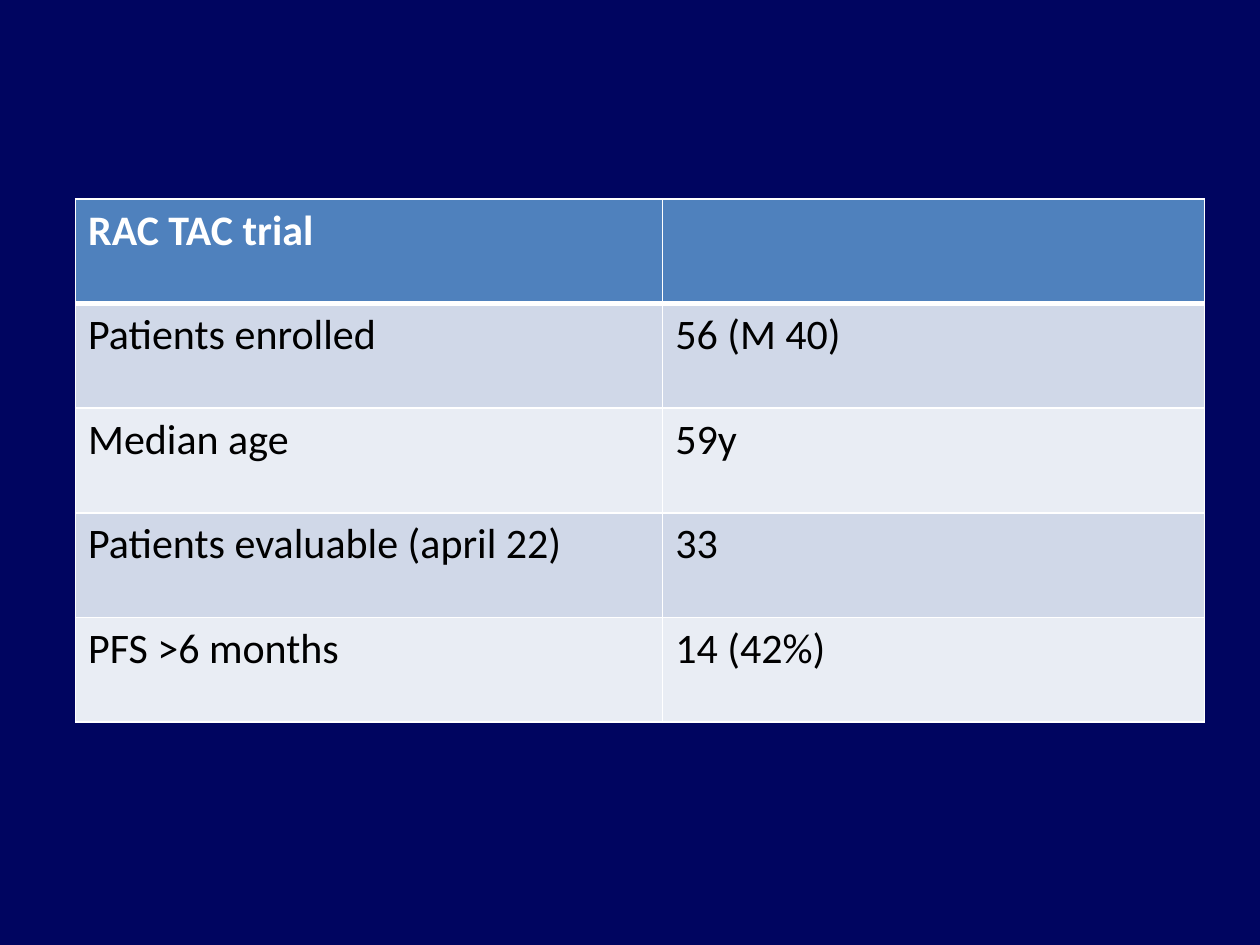
"""Build a slide with a summary table of the RAC TAC trial."""
from lxml import etree
from pptx import Presentation
from pptx.dml.color import RGBColor
from pptx.oxml import ns
from pptx.util import Inches, Pt

ROWS = [
    ("RAC TAC trial", ""),
    ("Patients enrolled", "56 (M 40)"),
    ("Median age", "59y"),
    ("Patients evaluable (april 22)", "33"),
    ("PFS >6 months", "14 (42%)"),
]
WIDTHS = (4.66, 4.3)
LEFT, TOP, HIGH = 0.6, 1.58, 0.83

NAVY = RGBColor(0x00, 0x05, 0x60)
BLUE = RGBColor(0x4F, 0x81, 0xBD)
DARK = RGBColor(0xD0, 0xD8, 0xE8)
PALE = RGBColor(0xE9, 0xED, 0xF4)
WHITE = RGBColor(0xFF, 0xFF, 0xFF)
BLACK = RGBColor(0x00, 0x00, 0x00)


def add_edge(cell, side, width):
    props = cell._tc.get_or_add_tcPr()
    line = etree.SubElement(props, ns.qn(f"a:ln{side}"), w=str(Pt(width)))
    fill = etree.SubElement(line, ns.qn("a:solidFill"))
    etree.SubElement(fill, ns.qn("a:srgbClr"), val=str(WHITE))


def fill_cell(cell, words, row):
    head = row == 0
    thick = {"T": 3 if row == 1 else 1, "B": 3 if head else 1}
    for side in "LRTB":
        add_edge(cell, side, thick.get(side, 1))
    cell.fill.solid()
    cell.fill.fore_color.rgb = BLUE if head else DARK if row % 2 else PALE
    para = cell.text_frame.paragraphs[0]
    para.font.size = Pt(24)
    if words:
        run = para.add_run()
        run.text = words
        run.font.name = "Calibri"
        run.font.size = Pt(24)
        run.font.bold = head
        run.font.color.rgb = WHITE if head else BLACK


def main():
    deck = Presentation()
    deck.slide_width, deck.slide_height = Inches(10), Inches(7.5)
    slide = deck.slides.add_slide(deck.slide_layouts[6])
    slide.background.fill.solid()
    slide.background.fill.fore_color.rgb = NAVY

    frame = slide.shapes.add_table(
        len(ROWS), len(WIDTHS), Inches(LEFT), Inches(TOP),
        Inches(sum(WIDTHS)), Inches(HIGH * len(ROWS)))
    table = frame.table
    for col, width in zip(table.columns, WIDTHS):
        col.width = Inches(width)
    for row, items in enumerate(ROWS):
        table.rows[row].height = Inches(HIGH)
        for col, words in enumerate(items):
            fill_cell(table.cell(row, col), words, row)
    deck.save("out.pptx")


if __name__ == "__main__":
    main()
